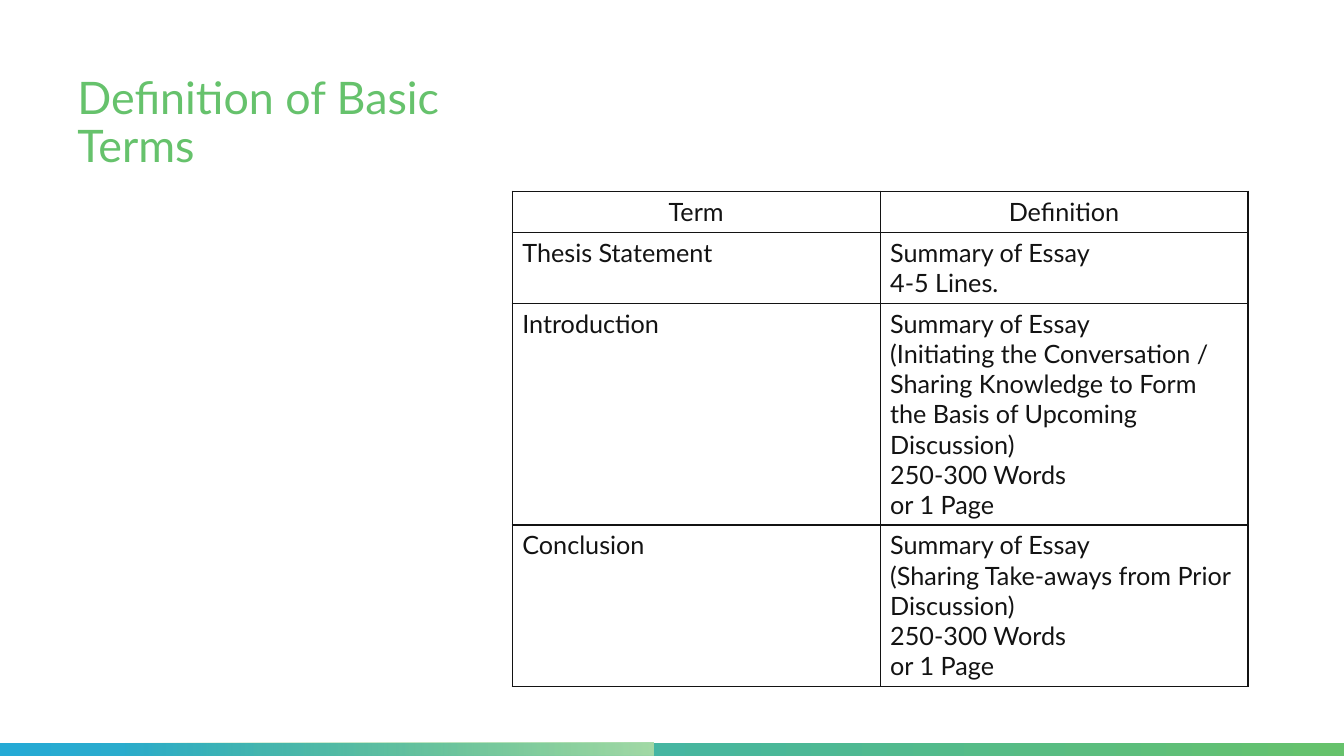
from lxml import etree
from pptx import Presentation
from pptx.dml.color import RGBColor
from pptx.enum.shapes import MSO_SHAPE
from pptx.enum.text import MSO_ANCHOR, PP_ALIGN
from pptx.oxml.ns import qn
from pptx.util import Cm, Pt

RECTANGLE = MSO_SHAPE.RECTANGLE
TOP = MSO_ANCHOR.TOP
LEFT, CENTER = PP_ALIGN.LEFT, PP_ALIGN.CENTER

GREEN = RGBColor(0x66, 0xC2, 0x6C)
PALE_GREEN = RGBColor(0xA3, 0xDA, 0xA7)
BLUE = RGBColor(0x25, 0xAA, 0xD5)
INK = RGBColor(0x13, 0x13, 0x13)
FONT = "Lato"

ROWS = [
    ("Term", "Definition"),
    ("Thesis Statement", "Summary of Essay\n4-5 Lines."),
    ("Introduction",
     "Summary of Essay\n(Initiating the Conversation / Sharing Knowledge to Form "
     "the Basis of Upcoming Discussion)\n250-300 Words\nor 1 Page"),
    ("Conclusion",
     "Summary of Essay\n(Sharing Take-aways from Prior Discussion)\n"
     "250-300 Words\nor 1 Page"),
]
ROW_HEIGHTS = [1.03, 1.79, 5.59, 4.06]
COLUMN_WIDTH = 9.27


def add_gradient_bar(slide, width, start, end, start_position=0):
    bar = slide.shapes.add_shape(RECTANGLE, 0, Cm(18.72), Cm(width), Cm(0.33))
    bar.shadow.inherit = False
    bar.line.fill.background()
    bar.fill.gradient()
    bar.fill.gradient_angle = 0
    first, last = bar.fill.gradient_stops
    first.color.rgb, last.color.rgb = start, end
    first.position = start_position
    return bar


def add_borders(cell):
    properties = cell._tc.get_or_add_tcPr()
    for side in ("lnL", "lnR", "lnT", "lnB"):
        line = etree.SubElement(properties, qn(f"a:{side}"), w=str(Pt(1)))
        fill = etree.SubElement(line, qn("a:solidFill"))
        etree.SubElement(fill, qn("a:srgbClr"), val=str(INK))


presentation = Presentation()
presentation.slide_width = Cm(33.87)
presentation.slide_height = Cm(19.05)
slide = presentation.slides.add_slide(presentation.slide_layouts[6])

add_gradient_bar(slide, 33.87, BLUE, GREEN)
overlay = add_gradient_bar(slide, 16.48, GREEN, PALE_GREEN, 0.19)
clear_color = overlay._element.spPr.find(".//" + qn("a:srgbClr"))
etree.SubElement(clear_color, qn("a:alpha"), val="0")

title = slide.shapes.add_textbox(Cm(1.7), Cm(1.78), Cm(9.7), Cm(10.06))
title.text_frame.word_wrap = True
title.text_frame.vertical_anchor = TOP
paragraph = title.text_frame.paragraphs[0]
paragraph.text = "Definition of Basic Terms"
paragraph.line_spacing = 0.9
paragraph.font.name = FONT
paragraph.font.size = Pt(32)
paragraph.font.color.rgb = GREEN

table = slide.shapes.add_table(
    len(ROWS), 2, Cm(12.91), Cm(4.82), Cm(2 * COLUMN_WIDTH), Cm(sum(ROW_HEIGHTS))
).table
table.first_row = False
table.horz_banding = False
for column in table.columns:
    column.width = Cm(COLUMN_WIDTH)

for row_index, (texts, height) in enumerate(zip(ROWS, ROW_HEIGHTS)):
    table.rows[row_index].height = Cm(height)
    for column_index, text in enumerate(texts):
        cell = table.cell(row_index, column_index)
        add_borders(cell)
        cell.fill.background()
        cell.text = text
        for paragraph in cell.text_frame.paragraphs:
            paragraph.alignment = CENTER if row_index == 0 else LEFT
            paragraph.font.name = FONT
            paragraph.font.size = Pt(18)
            paragraph.font.color.rgb = INK

presentation.save("out.pptx")
